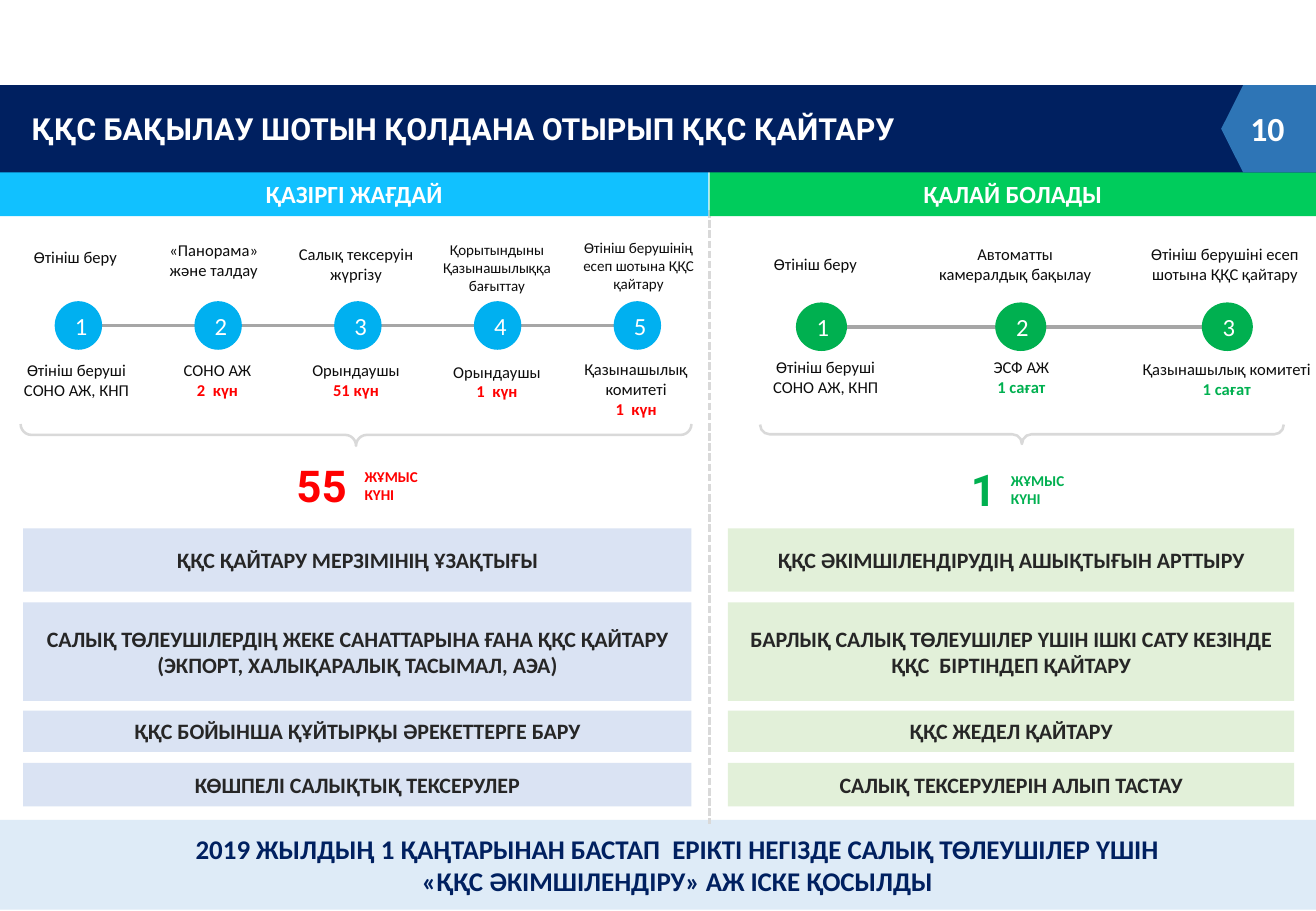
from dataclasses import dataclass
from typing import Optional

from lxml import etree
from pptx import Presentation
from pptx import util as u
from pptx.dml import color
from pptx.enum import dml, shapes, text
from pptx.oxml import ns

EMU_PER_PX = 9144
COLORS = {
    "navy": "002060", "badge": "2E75B6", "footer": "DEEBF7", "white": "FFFFFF",
    "cyan": "11C1FF", "blue": "00B0F0", "pale_blue": "DAE3F3",
    "lime": "00CC5C", "green": "00B050", "pale_green": "E2F0D9",
    "red": "FF0000", "ink": "0D0D0D", "dark": "262626",
    "axis": "A6A6A6", "brace": "D9D9D9",
}
ROWS = [(435, 52), (496, 81), (585, 34), (628, 36)]


@dataclass
class Box:
    left: int
    top: int
    width: int
    height: int


@dataclass
class Caption:
    box: Box
    words: str
    size: float = 9.8
    timed: bool = False


@dataclass
class Stage:
    left: int
    action: Caption
    owner: Caption


@dataclass
class Panel:
    header: Box
    title: str
    header_fill: str
    node: Box
    node_fill: str
    stages: list[Stage]
    brace: Box
    total_box: Box
    total: str
    unit_box: Box
    accent: str
    row_left: int
    row_width: int
    row_fill: str
    rows: list[str]


def px(value: int) -> u.Emu:
    return u.Emu(value * EMU_PER_PX)


def rgb(name: str) -> color.RGBColor:
    return color.RGBColor.from_string(COLORS[name])


def place(box: Box) -> tuple[u.Emu, ...]:
    return px(box.left), px(box.top), px(box.width), px(box.height)


def write(target, words: str, *, size: float, ink: str, bold: bool = False,
          font: str = "Calibri", align: str = "CENTER", anchor: str = "MIDDLE",
          insets: tuple[int, int] = (11, 5), shift: int = 0, wrap: bool = True,
          grow: bool = False, after: float = 0, accent: Optional[str] = None) -> None:
    frame = target.text_frame
    frame.word_wrap = wrap
    frame.auto_size = text.MSO_AUTO_SIZE.SHAPE_TO_FIT_TEXT if grow else text.MSO_AUTO_SIZE.NONE
    frame.vertical_anchor = text.MSO_ANCHOR[anchor]
    frame.margin_left, frame.margin_right = px(insets[0] + shift), px(insets[0])
    frame.margin_top = frame.margin_bottom = px(insets[1])
    frame.text = words
    for paragraph in frame.paragraphs:
        paragraph.alignment = text.PP_ALIGN[align]
        paragraph.space_after = u.Pt(after)
        for run in paragraph.runs:
            run.font.name, run.font.size, run.font.bold = font, u.Pt(size), bold
            run.font.color.rgb = rgb(ink)
    if accent:
        for run in frame.paragraphs[-1].runs:
            run.font.bold = True
            run.font.color.rgb = rgb(accent)


def add_filled(slide, box: Box, fill: str, kind=shapes.MSO_SHAPE.RECTANGLE):
    shape = slide.shapes.add_shape(kind, *place(box))
    shape.shadow.inherit = False
    shape.fill.solid()
    shape.fill.fore_color.rgb = rgb(fill)
    shape.line.fill.background()
    return shape


def add_label(slide, box: Box, words: str, **style) -> None:
    write(slide.shapes.add_textbox(*place(box)), words, **style)


def add_rule(slide, start: tuple[int, int], end: tuple[int, int], ink: str,
             width: float, dash=None) -> None:
    rule = slide.shapes.add_connector(shapes.MSO_CONNECTOR.STRAIGHT,
                                      *(px(value) for value in start + end))
    rule.line.color.rgb = rgb(ink)
    rule.line.width = u.Pt(width)
    if dash is not None:
        rule.line.dash_style = dash
    etree.SubElement(rule._element.spPr, ns.qn("a:effectLst"))


def add_brace(slide, box: Box) -> None:
    brace = slide.shapes.add_shape(shapes.MSO_SHAPE.LEFT_BRACE, *place(box))
    brace.shadow.inherit = False
    brace.rotation = 270
    brace.adjustments[0], brace.adjustments[1] = 0.49, 0.5
    brace.fill.background()
    brace.line.color.rgb = rgb("brace")
    brace.line.width = u.Pt(1.5)


def draw_panel(slide, panel: Panel) -> None:
    write(add_filled(slide, panel.header, panel.header_fill), panel.title,
          size=14.6, ink="white", bold=True, insets=(8, 4))
    node = panel.node
    middle = node.top + node.height // 2
    add_rule(slide, (panel.stages[0].left + 20, middle),
             (panel.stages[-1].left + 20, middle), "axis", 2.25)
    for number, stage in enumerate(panel.stages, 1):
        circle = Box(stage.left, node.top, node.width, node.height)
        write(add_filled(slide, circle, panel.node_fill, shapes.MSO_SHAPE.OVAL),
              str(number), size=14.6, ink="white")
        for caption in (stage.action, stage.owner):
            add_label(slide, caption.box, caption.words, size=caption.size, ink="ink",
                      insets=(3, 5), grow=True,
                      accent=panel.accent if caption.timed else None)
    add_brace(slide, panel.brace)
    total_style = dict(ink=panel.accent, bold=True, align="LEFT", anchor="TOP",
                       wrap=False, grow=True)
    add_label(slide, panel.total_box, panel.total, size=26, font="Roboto", **total_style)
    add_label(slide, panel.unit_box, "ЖҰМЫС\nКҮНІ", size=8.9, **total_style)
    for (top, height), words in zip(ROWS, panel.rows):
        row = Box(panel.row_left, top, panel.row_width, height)
        write(add_filled(slide, row, panel.row_fill), words,
              size=13, ink="dark", bold=True, after=13)


CURRENT = Panel(
    Box(0, 141, 583, 37), "ҚАЗІРГІ ЖАҒДАЙ", "cyan", Box(45, 248, 39, 40), "blue",
    [
        Stage(45, Caption(Box(16, 198, 92, 27), "Өтініш беру"),
              Caption(Box(5, 291, 116, 44), "Өтініш беруші\nСОНО АЖ, КНП")),
        Stage(160, Caption(Box(118, 192, 116, 44), "«Панорама»\nжәне талдау"),
              Caption(Box(81, 291, 196, 44), "СОНО АЖ\n2  күн", timed=True)),
        Stage(275, Caption(Box(226, 195, 134, 44), "Салық тексеруін\nжүргізу"),
              Caption(Box(226, 291, 134, 44), "Орындаушы\n51 күн", timed=True)),
        Stage(390, Caption(Box(342, 192, 134, 56), "Қорытындыны Қазынашылыққа\nбағыттау", 8.9),
              Caption(Box(342, 292, 134, 44), "Орындаушы\n1  күн", timed=True)),
        Stage(505, Caption(Box(470, 191, 111, 56), "Өтініш берушінің есеп шотына ҚҚС қайтару", 8.9),
              Caption(Box(470, 290, 107, 60), "Қазынашылық комитеті\n1  күн", timed=True)),
    ],
    Box(284, 82, 18, 552), Box(233, 373, 68, 55), "55", Box(289, 380, 69, 41), "red",
    19, 550, "pale_blue",
    ["ҚҚС ҚАЙТАРУ МЕРЗІМІНІҢ ҰЗАҚТЫҒЫ",
     "САЛЫҚ ТӨЛЕУШІЛЕРДІҢ ЖЕКЕ САНАТТАРЫНА ҒАНА ҚҚС ҚАЙТАРУ (ЭКПОРТ, ХАЛЫҚАРАЛЫҚ ТАСЫМАЛ, АЭА)",
     "ҚҚС БОЙЫНША ҚҰЙТЫРҚЫ ӘРЕКЕТТЕРГЕ БАРУ",
     "КӨШПЕЛІ САЛЫҚТЫҚ ТЕКСЕРУЛЕР"])

FUTURE = Panel(
    Box(584, 141, 499, 37), "ҚАЛАЙ БОЛАДЫ", "lime", Box(655, 249, 42, 40), "green",
    [
        Stage(655, Caption(Box(625, 204, 92, 27), "Өтініш беру"),
              Caption(Box(598, 288, 163, 44), "Өтініш беруші\nСОНО АЖ, КНП")),
        Stage(819, Caption(Box(764, 195, 143, 44), "Автоматты камералдық бақылау"),
              Caption(Box(760, 288, 161, 44), "ЭСФ АЖ\n1 сағат", timed=True)),
        Stage(989, Caption(Box(931, 195, 154, 44), "Өтініш берушіні есеп шотына ҚҚС қайтару"),
              Caption(Box(937, 290, 145, 44), "Қазынашылық комитеті\n1 сағат", timed=True)),
    ],
    Box(833, 142, 16, 431), Box(788, 376, 45, 55), "1", Box(821, 383, 69, 41), "green",
    599, 466, "pale_green",
    ["ҚҚС ӘКІМШІЛЕНДІРУДІҢ АШЫҚТЫҒЫН АРТТЫРУ",
     "БАРЛЫҚ САЛЫҚ ТӨЛЕУШІЛЕР ҮШІН ІШКІ САТУ КЕЗІНДЕ ҚҚС  БІРТІНДЕП ҚАЙТАРУ",
     "ҚҚС ЖЕДЕЛ ҚАЙТАРУ",
     "САЛЫҚ ТЕКСЕРУЛЕРІН АЛЫП ТАСТАУ"])


def main() -> None:
    deck = Presentation()
    deck.slide_width, deck.slide_height = px(1083), px(750)
    slide = deck.slides.add_slide(deck.slide_layouts[6])
    write(add_filled(slide, Box(0, 675, 1083, 74), "footer"),
          "2019 ЖЫЛДЫҢ 1 ҚАҢТАРЫНАН БАСТАП  ЕРІКТІ НЕГІЗДЕ САЛЫҚ ТӨЛЕУШІЛЕР ҮШІН\n"
          "«ҚҚС ӘКІМШІЛЕНДІРУ» АЖ ІСКЕ ҚОСЫЛДЫ",
          size=16, ink="navy", bold=True, insets=(10, 5), shift=32)
    add_rule(slide, (584, 173), (584, 678), "brace", 1.5, dml.MSO_LINE.SQUARE_DOT)
    for panel in (CURRENT, FUTURE):
        draw_panel(slide, panel)
    add_filled(slide, Box(0, 70, 1083, 72), "navy")
    add_label(slide, Box(18, 87, 975, 39), "ҚҚС БАҚЫЛАУ ШОТЫН ҚОЛДАНА ОТЫРЫП ҚҚС ҚАЙТАРУ",
              size=18, ink="white", bold=True, font="Roboto", align="LEFT",
              anchor="TOP", insets=(8, 4), grow=True)
    badge = add_filled(slide, Box(1005, 70, 78, 72), "badge", shapes.MSO_SHAPE.PENTAGON)
    badge.rotation = 180
    badge.adjustments[0] = 0.25
    add_label(slide, Box(1008, 85, 59, 40), "10", size=20, ink="white", bold=True,
              align="RIGHT", insets=(10, 5))
    deck.save("out.pptx")


if __name__ == "__main__":
    main()
